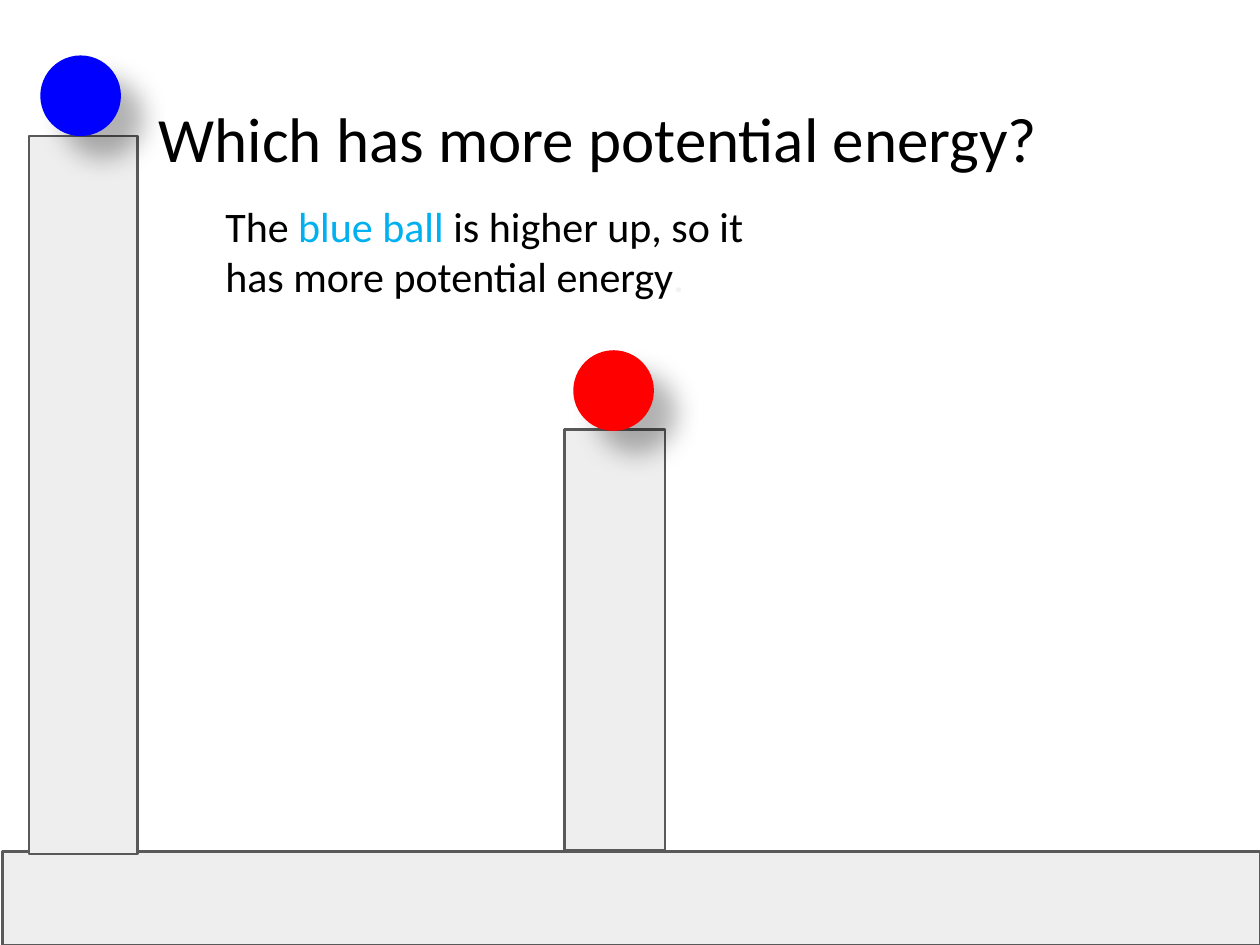
from lxml import etree
from pptx import Presentation
from pptx.dml.color import RGBColor
from pptx.enum import shapes, text
from pptx.oxml import ns
from pptx.util import Inches, Pt

FONT = "Calibri"
BLACK, GREY, OUTLINE = "000000", "EEEEEE", "595959"
BALL_SIZE = 0.64

# left, top, width, height
GROUND = (0.02, 6.76, 9.98, 0.74)
# pillar position, ball left, ball top, ball colour
TOWERS = [
    ((0.23, 1.08, 0.86, 5.7), 0.32, 0.44, "0000FF"),
    ((4.48, 3.41, 0.8, 3.34), 4.55, 2.78, "FF0000"),
]
TITLE_AT = (1.16, 0.69, 7.52, 0.8)
QUESTION = [("Which has more potential energy?", BLACK)]
ANSWER_AT = (1.69, 1.49, 4.34, 1.11)
ANSWER = [
    ("The ", BLACK),
    ("blue ball ", "00B0F0"),
    ("is higher up, so it has more potential energy", BLACK),
    (".", "F2F2F2"),
]


def colour(value):
    return RGBColor.from_string(value)


def add_solid(page, kind, place, fill, line=None):
    shape = page.shapes.add_shape(kind, *map(Inches, place))
    shape.shadow.inherit = False
    shape.fill.solid()
    shape.fill.fore_color.rgb = colour(fill)
    if line:
        shape.line.color.rgb = colour(line)
        shape.line.width = Pt(1.5)
    else:
        shape.line.fill.background()
    return shape


def add_block(page, place):
    add_solid(page, shapes.MSO_SHAPE.RECTANGLE, place, GREY, OUTLINE)


def add_ball(page, left, top, fill):
    place = (left, top, BALL_SIZE, BALL_SIZE)
    ball = add_solid(page, shapes.MSO_SHAPE.OVAL, place, fill)
    effects = ball._element.spPr.find(ns.qn("a:effectLst"))
    shadow = etree.SubElement(
        effects, ns.qn("a:outerShdw"), blurRad=str(Pt(15)), dist=str(Pt(18)),
        dir=str(45 * 60000), algn="ctr", rotWithShape="0")
    tint = etree.SubElement(shadow, ns.qn("a:srgbClr"), val=BLACK)
    etree.SubElement(tint, ns.qn("a:alpha"), val="30000")


def write(box, spans, size):
    frame = box.text_frame
    frame.word_wrap = True
    frame.auto_size = text.MSO_AUTO_SIZE.NONE
    frame.vertical_anchor = text.MSO_ANCHOR.TOP
    frame.margin_left = frame.margin_right = Inches(0.1)
    frame.margin_top = frame.margin_bottom = Inches(0.1)
    para = frame.paragraphs[0]
    para.alignment = text.PP_ALIGN.LEFT
    for words, tone in spans:
        span = para.add_run()
        span.text = words
        span.font.name = FONT
        span.font.size = Pt(size)
        span.font.color.rgb = colour(tone)


def main():
    deck = Presentation()
    deck.slide_width, deck.slide_height = Inches(10), Inches(7.5)
    page = deck.slides.add_slide(deck.slide_layouts.get_by_name("Title Only"))

    add_block(page, GROUND)
    for pillar, left, top, fill in TOWERS:
        add_block(page, pillar)
        add_ball(page, left, top, fill)

    title = page.shapes.title
    title.left, title.top, title.width, title.height = map(Inches, TITLE_AT)
    write(title, QUESTION, 36)
    write(page.shapes.add_textbox(*map(Inches, ANSWER_AT)), ANSWER, 24)

    deck.save("out.pptx")


if __name__ == "__main__":
    main()
